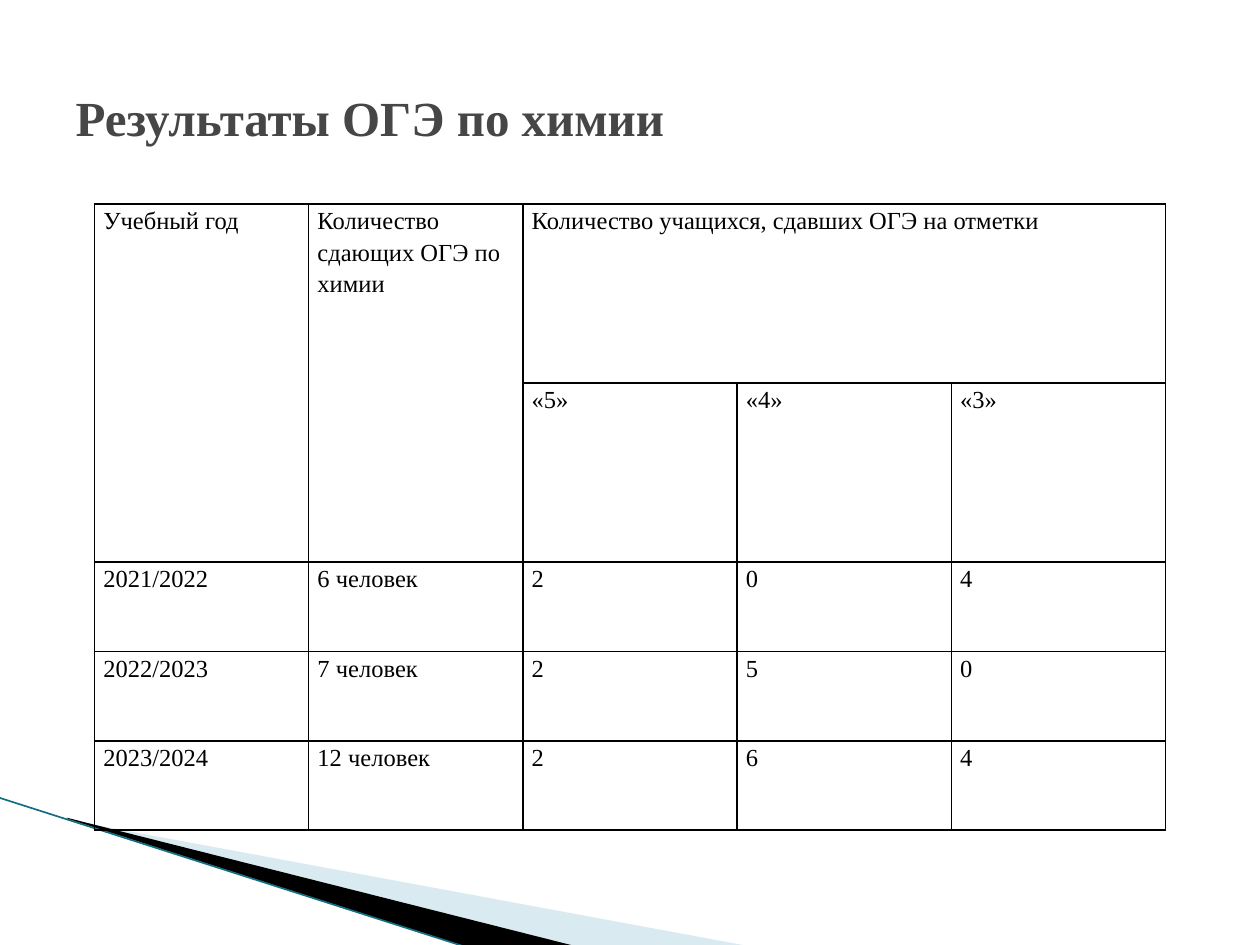
from lxml import etree
from pptx import Presentation
from pptx.dml.color import RGBColor
from pptx.enum import shapes, text
from pptx.oxml import ns
from pptx.util import Inches, Pt

FONT = "Times New Roman"
BLACK = RGBColor(0x00, 0x00, 0x00)
TITLE_GREY = RGBColor(0x46, 0x46, 0x46)
PALE_BLUE = RGBColor(0xA0, 0xCB, 0xDC)
TEAL = RGBColor(0x14, 0x6E, 0x82)

ROWS = [
    ["Учебный год", "Количество сдающих ОГЭ по химии",
     "Количество учащихся, сдавших ОГЭ на отметки", "", ""],
    ["", "", "«5»", "«4»", "«3»"],
    ["2021/2022", "6 человек", "2", "0", "4"],
    ["2022/2023", "7 человек", "2", "5", "0"],
    ["2023/2024", "12 человек", "2", "6", "4"],
]
ROW_HEIGHTS = [1.42, 1.42, 0.71, 0.71, 0.71]
MERGES = [((0, 0), (1, 0)), ((0, 1), (1, 1)), ((0, 2), (0, 4))]


def set_attributes(target, values):
    for name, value in values.items():
        setattr(target, name, value)


def format_font(font, size, color, bold=False):
    set_attributes(font, {"name": FONT, "size": Pt(size), "bold": bold})
    font.color.rgb = color


def add_wedge(slide, points, color, opacity=100):
    corners = [(Inches(x), Inches(y)) for x, y in points]
    builder = slide.shapes.build_freeform(*corners[0])
    builder.add_line_segments(corners[1:], close=True)
    shape = builder.convert_to_shape()
    shape.shadow.inherit = False
    shape.fill.solid()
    shape.fill.fore_color.rgb = color
    shape.line.fill.background()
    if opacity < 100:
        color_element = shape._element.spPr.find(".//" + ns.qn("a:srgbClr"))
        etree.SubElement(color_element, ns.qn("a:alpha"), val=str(opacity * 1000))


def add_corner(slide, left, top):
    """Wedges and edge line that sweep to the bottom of the slide."""
    def place(*points):
        return [(left + x, top + y) for x, y in points]

    add_wedge(slide, place((0.55, 0.18), (5.95, 1.18), (4.56, 1.18), (0.55, 0.17)),
              PALE_BLUE, 40)
    add_wedge(slide, place((0.53, 0.16), (4.57, 1.18), (3.72, 1.19), (0.54, 0.17)),
              BLACK)
    start, end = place((-0.01, 0), (3.71, 1.19))
    edge = slide.shapes.add_connector(
        shapes.MSO_CONNECTOR.STRAIGHT, *map(Inches, start + end))
    edge.line.color.rgb = TEAL
    edge.line.width = Pt(0.95)
    etree.SubElement(edge._element.spPr, ns.qn("a:effectLst"))


def add_title(slide, left, top, width, height):
    title = slide.shapes.title
    set_attributes(title, {"left": Inches(left), "top": Inches(top),
                           "width": Inches(width), "height": Inches(height)})
    title.text_frame.text = "Результаты ОГЭ по химии"
    title.text_frame.vertical_anchor = text.MSO_ANCHOR.MIDDLE
    paragraph = title.text_frame.paragraphs[0]
    paragraph.alignment = text.PP_ALIGN.LEFT
    format_font(paragraph.runs[0].font, 28, TITLE_GREY, bold=True)


def add_borders(cell):
    properties = cell._tc.get_or_add_tcPr()
    for side in ("lnL", "lnR", "lnT", "lnB"):
        line = etree.SubElement(properties, ns.qn(f"a:{side}"), w=str(Pt(1)))
        fill = etree.SubElement(line, ns.qn("a:solidFill"))
        etree.SubElement(fill, ns.qn("a:srgbClr"), val=str(BLACK))


def add_results_table(slide, left, top, width):
    frame = slide.shapes.add_table(
        len(ROWS), len(ROWS[0]), Inches(left), Inches(top),
        Inches(width), Inches(sum(ROW_HEIGHTS)))
    table = frame.table
    set_attributes(table, {"first_row": False, "horz_banding": False})
    for row, height in zip(table.rows, ROW_HEIGHTS):
        row.height = Inches(height)
    for r, values in enumerate(ROWS):
        for c, value in enumerate(values):
            cell = table.cell(r, c)
            set_attributes(cell, {"margin_left": Inches(0.07), "margin_right": Inches(0.07),
                                  "margin_top": 0, "margin_bottom": 0})
            add_borders(cell)
            cell.fill.background()
            cell.text = value
            paragraph = cell.text_frame.paragraphs[0]
            paragraph.line_spacing = 1.15
            for run in paragraph.runs:
                format_font(run.font, 14, BLACK)
    for first, last in MERGES:
        table.cell(*first).merge(table.cell(*last))


def main():
    presentation = Presentation()
    presentation.slide_width = Inches(10)
    presentation.slide_height = Inches(7.5)
    slide = presentation.slides.add_slide(presentation.slide_layouts[5])
    # Corner decoration lies under the table
    add_corner(slide, 0, 6.33)
    add_title(slide, 0.5, 0.3, 9, 1.25)
    add_results_table(slide, 0.75, 1.62, 8.5)
    presentation.save("out.pptx")


if __name__ == "__main__":
    main()
